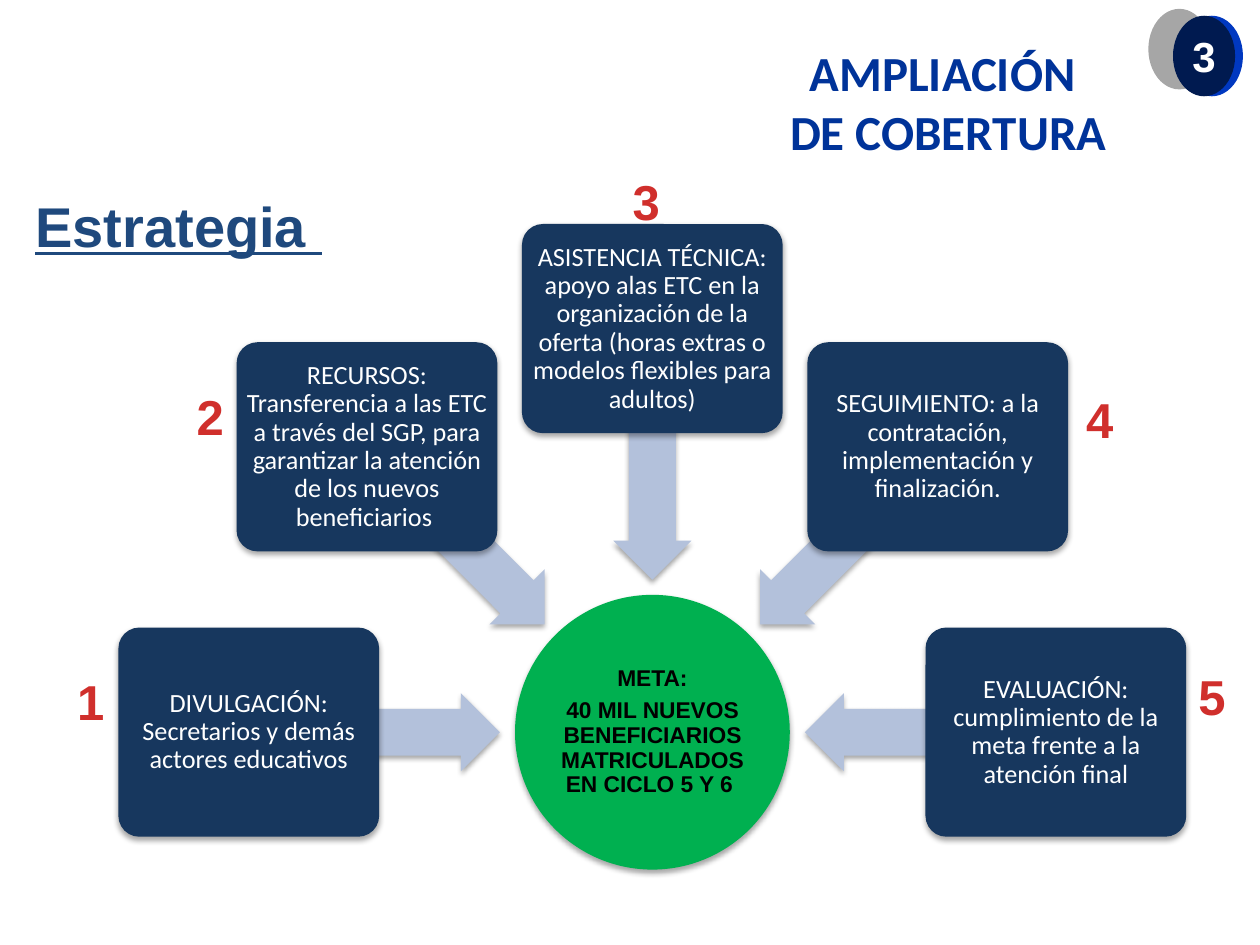
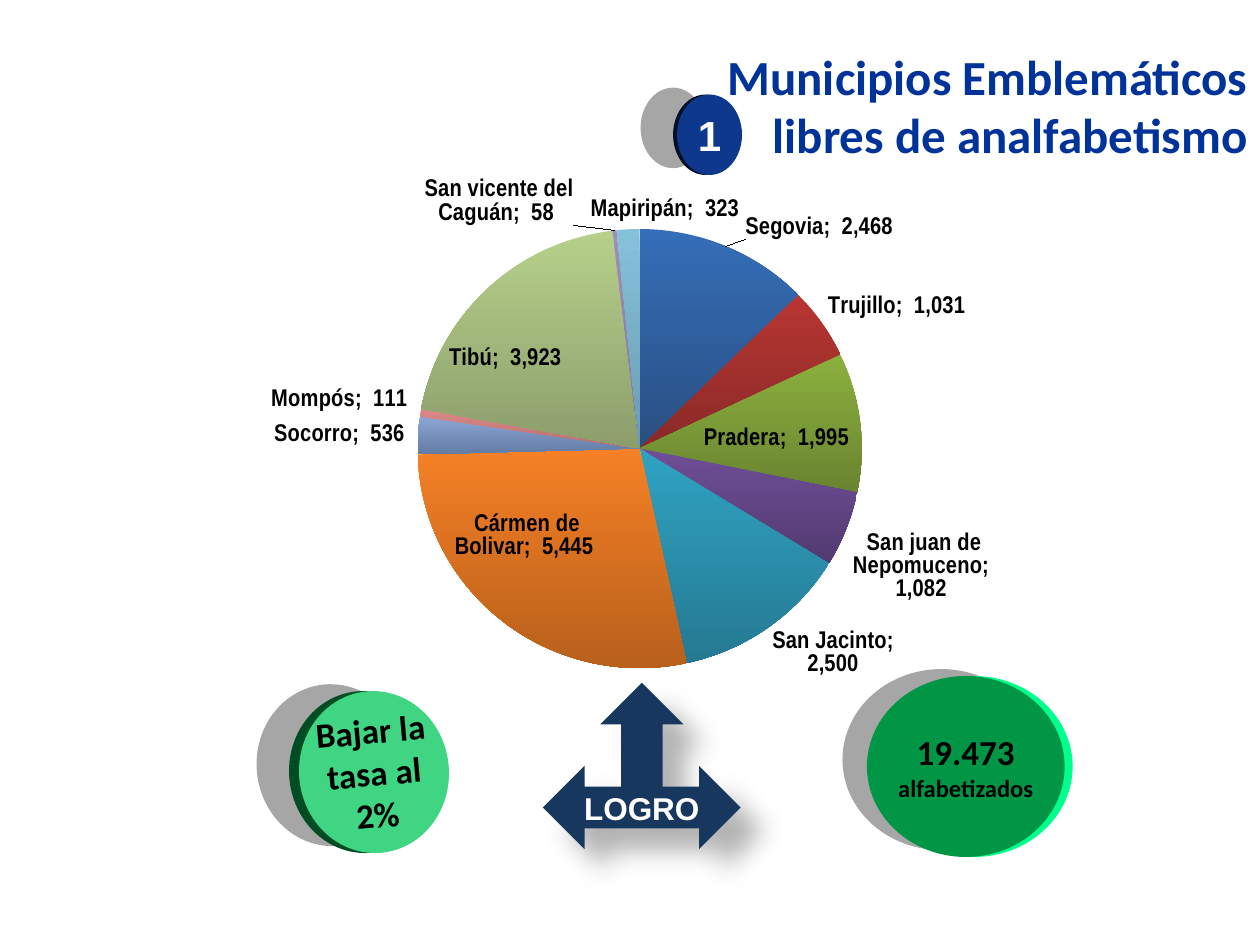
from dataclasses import dataclass
from math import cos, radians, sin

from lxml import etree
from pptx import Presentation
from pptx.chart.data import CategoryChartData
from pptx.dml.color import RGBColor
from pptx.enum.chart import XL_CHART_TYPE, XL_LABEL_POSITION
from pptx.enum.shapes import MSO_SHAPE
from pptx.enum.text import MSO_ANCHOR, MSO_AUTO_SIZE, PP_ALIGN
from pptx.oxml import parse_xml
from pptx.oxml.ns import nsdecls, qn
from pptx.util import Pt

LEFT, MID, RIGHT = PP_ALIGN.LEFT, PP_ALIGN.CENTER, PP_ALIGN.RIGHT
OVAL, CARD = MSO_SHAPE.OVAL, MSO_SHAPE.ROUNDED_RECTANGLE
ARROW, TRIPLE = MSO_SHAPE.LEFT_ARROW, MSO_SHAPE.LEFT_RIGHT_UP_ARROW
MIDDLE, TOP = MSO_ANCHOR.MIDDLE, MSO_ANCHOR.TOP
FIXED = MSO_AUTO_SIZE.NONE
PIE, BEST = XL_CHART_TYPE.PIE, XL_LABEL_POSITION.BEST_FIT

SANS, BODY, SLIM = "Arial", "Calibri", "Arial Narrow"
BLACK, WHITE = "000000", "FFFFFF"
NAVY, BLUE, INK = "17375E", "003399", "1F497D"
GREEN, PALE, RED = "00B050", "B3C1DB", "D02F2C"


@dataclass
class Shade:
    blur: float
    dist: float
    angle: int
    alpha: int


@dataclass
class Step:
    text: str
    mark_x: float
    mark_y: float


@dataclass
class Disc:
    x: float
    y: float
    w: float
    h: float
    face: str
    rim: str
    shift: float  # how far the rim shows beside the face
    turn: float = 0


@dataclass
class Slice:
    name: str
    value: int
    light: str
    dark: str


SOFT = Shade(3.1, 1.8, 90, 35)
HARD = Shade(0, 19, 192, 35)
LONG = Shade(15, 18, 45, 30)

STEPS = [
    Step("DIVULGACIÓN: Secretarios y demás actores educativos", 36.7, 380),
    Step("RECURSOS: Transferencia a las ETC a través del SGP, para garantizar "
         "la atención de los nuevos beneficiarios ", 105, 217.5),
    Step("ASISTENCIA TÉCNICA: apoyo alas ETC en la organización de la oferta "
         "(horas extras o modelos flexibles para adultos)", 354.2, 94.3),
    Step("SEGUIMIENTO: a la contratación, implementación y finalización.",
         613.4, 219),
    Step("EVALUACIÓN: cumplimiento de la meta frente a la atención final",
         677.5, 377.3),
]

SLICES = [
    Slice("Segovia", 2468, "346EB8", "2A4F82"),
    Slice("Trujillo", 1031, "B83632", "8A2A28"),
    Slice("Pradera", 1995, "8CB03E", "698430"),
    Slice("San juan de Nepomuceno", 1082, "6F4E97", "523A70"),
    Slice("San Jacinto", 2500, "2FA2C2", "257A92"),
    Slice("Cármen de Bolivar", 5445, "F58025", "B8601C"),
    Slice("Socorro", 536, "8BA6D6", "637CA3"),
    Slice("Mompós", 111, "D88A88", "B96F6D"),
    Slice("Tibú", 3923, "B6D08A", "8C9E6C"),
    Slice("San vicente del Caguán", 58, "A08FB8", "857799"),
    Slice("Mapiripán", 323, "86C1DA", "6A9CB0"),
]


def rgb(code: str) -> RGBColor:
    return RGBColor.from_string(code)


def style(font, size: float, face: str, color: str, bold: bool) -> None:
    font.size, font.name, font.bold = Pt(size), face, bold
    font.color.rgb = rgb(color)


def write(shape, *lines: str, size=18, face=SANS, color=BLACK, bold=True,
          align=MID, anchor=MIDDLE, wrap=True, inset=None, space=None,
          after=0, line=False, small=None) -> None:
    """Fill a shape with paragraphs; small sets the size of the later ones."""
    frame = shape.text_frame
    frame.auto_size, frame.word_wrap = FIXED, wrap
    frame.vertical_anchor = anchor
    if inset is not None:
        frame.margin_left = frame.margin_right = Pt(inset)
        frame.margin_top = frame.margin_bottom = Pt(inset)
    for i, text in enumerate(lines):
        para = frame.add_paragraph() if i else frame.paragraphs[0]
        para.text, para.alignment = text, align
        if space:
            para.line_spacing = space
        if i < len(lines) - 1:
            para.space_after = Pt(after)
        for run in para.runs:
            style(run.font, small if i and small else size, face, color, bold)
            if line:
                run.font.underline = True


def cast(shape, shade: Shade) -> None:
    """Give a shape an outer shadow."""
    shape.shadow.inherit = False
    list_ = shape._element.spPr.find(qn("a:effectLst"))
    outer = etree.SubElement(
        list_, qn("a:outerShdw"), blurRad=str(Pt(shade.blur)),
        dist=str(Pt(shade.dist)), dir=str(shade.angle * 60000),
        algn="ctr", rotWithShape="0")
    color = etree.SubElement(outer, qn("a:srgbClr"), val=BLACK)
    etree.SubElement(color, qn("a:alpha"), val=str(shade.alpha * 1000))


def draw(slide, kind, x: float, y: float, w: float, h: float, fill: str,
         shade: Shade | None = None, turn: float = 0, adjust=()):
    shape = slide.shapes.add_shape(kind, Pt(x), Pt(y), Pt(w), Pt(h))
    shape.fill.solid()
    shape.fill.fore_color.rgb = rgb(fill)
    shape.line.fill.background()
    shape.shadow.inherit = False
    shape.rotation = turn
    for i, value in enumerate(adjust):
        shape.adjustments[i] = value
    if shade:
        cast(shape, shade)
    return shape


def place(slide, x: float, y: float, w: float, h: float):
    return slide.shapes.add_textbox(Pt(x), Pt(y), Pt(w), Pt(h))


def head(deck, text: str, x: float, y: float, w: float, h: float, **look):
    """Add a title-only slide and set its title."""
    slide = deck.slides.add_slide(deck.slide_layouts[5])
    title = slide.shapes.title
    title.left, title.top, title.width, title.height = map(Pt, (x, y, w, h))
    write(title, text, **look)
    return slide


def coin(slide, disc: Disc, *lines: str, **look) -> None:
    """Draw a thick disc: a rim with a shadow, then the face with text."""
    draw(slide, OVAL, disc.x + disc.shift, disc.y, disc.w, disc.h, disc.rim,
         HARD, disc.turn)
    face = draw(slide, OVAL, disc.x, disc.y, disc.w, disc.h, disc.face,
                turn=disc.turn)
    write(face, *lines, inset=0, wrap=False, **look)


def plan(deck) -> None:
    slide = head(deck, "Estrategia ", 13, 83.5, 244, 90, size=32,
                 color=INK, align=LEFT, line=True)

    # Goal in the middle of the wheel
    mid_x, mid_y, goal = 372.8, 418.4, 157
    hub = draw(slide, OVAL, mid_x - goal / 2, mid_y - goal / 2, goal, goal,
               GREEN, SOFT)
    write(hub, "META:", "40 MIL NUEVOS BENEFICIARIOS MATRICULADOS "
          "EN CICLO 5 Y 6 ", size=13, inset=0.7, space=0.9, after=4.5)

    # Arrows and cards, one each 45 degrees
    def spoke(kind, reach, angle, w, h, fill, turn, adjust):
        x = mid_x + reach * cos(radians(angle)) - w / 2
        y = mid_y + reach * sin(radians(angle)) - h / 2
        return draw(slide, kind, x, y, w, h, fill, SOFT, turn, adjust)

    for i, step in enumerate(STEPS):
        angle = 180 + 45 * i
        spoke(ARROW, 158.8, angle, 143.3, 44.6, PALE, angle % 360, (0.6, 0.5))
        card = spoke(CARD, 230.6, angle, 149, 119.5, NAVY, 0, (0.1,))
        write(card, step.text, size=15, face=BODY, color=WHITE, bold=False,
              inset=2.2, space=0.9)

    # Topic and step numbers
    coin(slide, Disc(670.3, 9, 35.5, 46, "001A50", "0038C0", 4.5), "3",
         size=24, color=WHITE)
    write(place(slide, 442.8, 20.9, 198, 75), "AMPLIACIÓN ", "DE COBERTURA",
          size=28, face=BODY, color=BLUE, anchor=TOP, wrap=False)
    for i, step in enumerate(STEPS, 1):
        write(place(slide, step.mark_x, step.mark_y, 30.2, 41), str(i),
              size=28, color=RED, anchor=TOP, wrap=False)


def rate(slide) -> None:
    """Draw the pie of people per town."""
    data = CategoryChartData()
    data.categories = [part.name for part in SLICES]
    data.add_series("Series 1", [part.value for part in SLICES])
    chart = slide.shapes.add_chart(PIE, Pt(111), Pt(100.8), Pt(485.3),
                                   Pt(288), data).chart
    chart.has_title = chart.has_legend = False
    style(chart.font, 14, SLIM, BLACK, True)
    plot = chart.plots[0]
    plot.vary_by_categories = True

    # Slices shaded from top to bottom
    for i, part in enumerate(SLICES):
        look = plot.series[0].points[i].format
        look.fill.gradient()
        look.fill.gradient_angle = 270
        for stop, code in zip(look.fill.gradient_stops,
                              (part.light, part.dark)):
            stop.color.rgb = rgb(code)
        look.line.fill.background()

    # Labels
    plot.has_data_labels = True
    tags = plot.data_labels
    tags.show_category_name = tags.show_value = True
    tags.show_percentage = False
    tags.position = BEST
    tags.number_format = r'_(* #,##0_);_(* \(#,##0\);_(* "-"??_);_('
    tags.number_format_is_linked = False
    style(tags.font, 14, SLIM, BLACK, True)

    # Fixed plot area
    area = chart.element.find(".//" + qn("c:plotArea"))
    for old in area.findall(qn("c:layout")):
        area.remove(old)
    sides = "".join(f'<c:{key} val="{value}"/>' for key, value in (
        ("layoutTarget", "inner"), ("xMode", "edge"), ("yMode", "edge"),
        ("x", 0.263), ("y", 0.101), ("w", 0.523), ("h", 0.882)))
    area.insert(0, parse_xml(
        f'<c:layout {nsdecls("c")}><c:manualLayout>{sides}'
        '</c:manualLayout></c:layout>'))


def towns(deck) -> None:
    slide = head(deck, "Municipios Emblemáticos\vlibres de analfabetismo",
                 371.5, 15, 348.5, 90, size=28, face=BODY, color=BLUE,
                 align=RIGHT)

    # Results
    coin(slide, Disc(495.4, 386.3, 113, 103.4, "009645", "00FF8C", 4.6),
         "19.473", "alfabetizados", size=20, small=14, face=BODY)
    coin(slide, Disc(170.9, 394.9, 85.7, 92.6, "3FD583", "004D23", -5.7, -5),
         "Bajar la\vtasa al\v2%", size=20, face=BODY)
    coin(slide, Disc(386.9, 54, 37.1, 46, "0D388C", "000F26", -2.3), "1",
         size=24, color=WHITE)
    sign = draw(slide, TRIPLE, 310.3, 390.2, 113, 95, NAVY, LONG)
    write(sign, "LOGRO", color=WHITE, wrap=False)
    rate(slide)


def main() -> None:
    deck = Presentation()
    deck.slide_width, deck.slide_height = Pt(720), Pt(540)
    plan(deck)
    towns(deck)
    deck.save("out.pptx")


if __name__ == "__main__":
    main()
